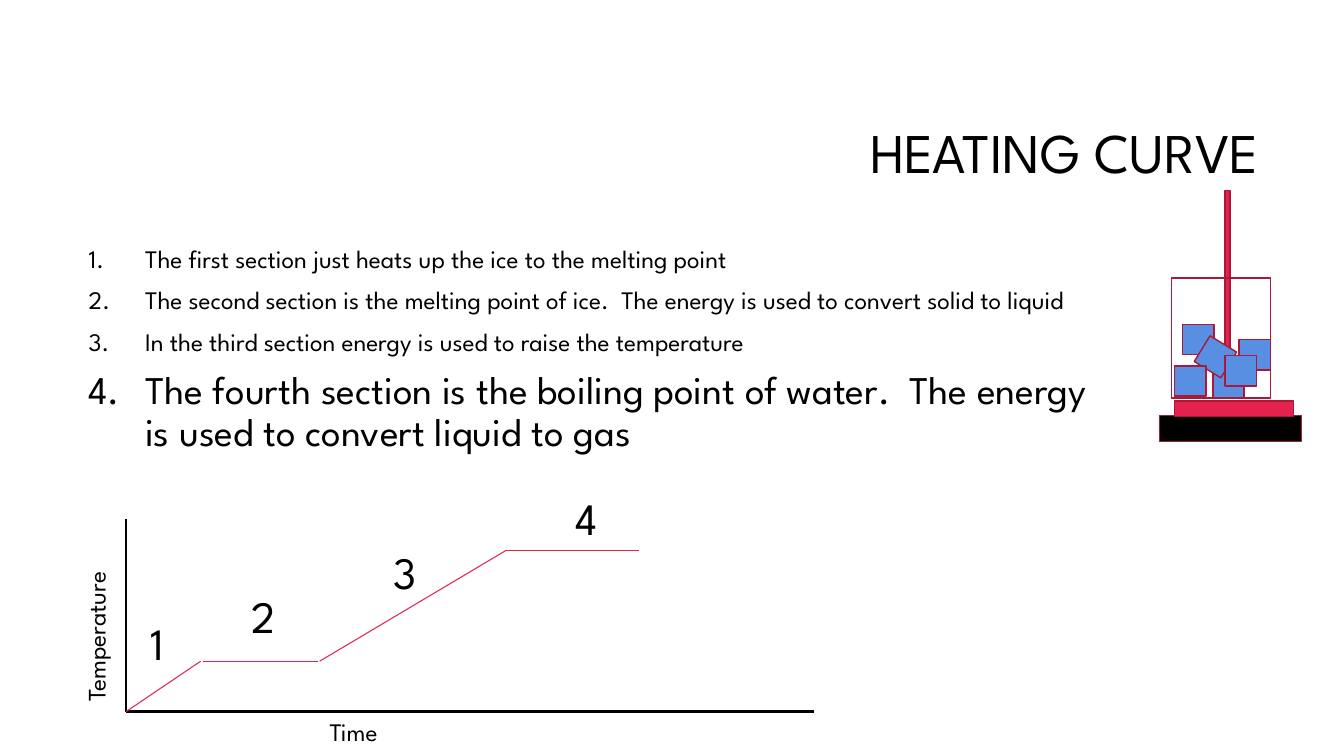
from lxml import etree
from pptx import Presentation
from pptx.dml.color import RGBColor
from pptx.enum.shapes import MSO_CONNECTOR as Connector, MSO_SHAPE as Shape
from pptx.enum.text import MSO_ANCHOR as Anchor, MSO_AUTO_SIZE as AutoSize, PP_ALIGN as Align
from pptx.oxml.ns import qn
from pptx.util import Inches, Pt

FONT = "League Spartan"
COLORS = {
    "black": "000000",
    "red": "E5224E",
    "outline": "A9193A",
    "ice": "588FE2",
}
SECTIONS = [
    ("The first section just heats up the ice to the melting point", 18),
    ("The second section is the melting point of ice.  The energy is used to convert solid to liquid", 18),
    ("In the third section energy is used to raise the temperature", 18),
    ("The fourth section is the boiling point of water.  The energy is used to convert liquid to gas", 28),
]
ICE_CUBES = [
    (11.73, 3.22, 0),
    (12.03, 3.65, 0),
    (11.9, 3.39, 31.6),
    (11.65, 3.63, 0),
    (12.29, 3.37, 0),
    (12.15, 3.53, 0),
]
AXES = [((1.25, 5.15), (1.25, 7.06)), ((1.25, 7.06), (8.07, 7.06))]
CURVE = [
    ("1", (1.25, 7.06), (1.99, 6.56), (1.39, 6.06)),
    ("2", (2.01, 6.56), (3.15, 6.56), (2.4, 5.79)),
    ("3", (3.17, 6.56), (5.02, 5.46), (3.8, 5.36)),
    ("4", (5.02, 5.46), (6.34, 5.46), (5.61, 4.82)),
]


def color(name):
    return RGBColor.from_string(COLORS[name])


def place(shape, left, top, width, height):
    shape.left, shape.top = Inches(left), Inches(top)
    shape.width, shape.height = Inches(width), Inches(height)


def write(paragraph, text, size=18, align=Align.LEFT, line_spacing=None, space_before=0):
    paragraph.text = text
    paragraph.alignment = align
    paragraph.space_before = Pt(space_before)
    if line_spacing:
        paragraph.line_spacing = line_spacing
    font = paragraph.runs[0].font
    font.name = FONT
    font.size = Pt(size)
    font.color.rgb = color("black")


def number(paragraph):
    properties = paragraph._p.get_or_add_pPr()
    properties.set("marL", str(Inches(0.56)))
    properties.set("indent", str(Inches(-0.56)))
    etree.SubElement(properties, qn("a:buFont"), typeface="+mj-lt")
    etree.SubElement(properties, qn("a:buAutoNum"), type="arabicPeriod")


def add_title(slide, text):
    title = slide.shapes.title
    place(title, 3.17, 0.84, 9.42, 1.41)
    title.text_frame.auto_size = AutoSize.NONE
    title.text_frame.vertical_anchor = Anchor.MIDDLE
    write(title.text_frame.paragraphs[0], text, size=40, align=Align.RIGHT, line_spacing=0.9)


def add_sections(slide):
    body = slide.placeholders[1]
    place(body, 0.78, 2.4, 10.36, 4.4)
    frame = body.text_frame
    frame.auto_size = AutoSize.NONE
    frame.vertical_anchor = Anchor.TOP
    for index, (text, size) in enumerate(SECTIONS):
        paragraph = frame.add_paragraph() if index else frame.paragraphs[0]
        number(paragraph)
        write(paragraph, text, size=size, line_spacing=0.9, space_before=10 if index else 0)


def add_block(slide, left, top, width, height, fill=None, rotation=0):
    block = slide.shapes.add_shape(
        Shape.RECTANGLE, Inches(left), Inches(top), Inches(width), Inches(height)
    )
    block.shadow.inherit = False
    block.rotation = rotation
    if fill:
        block.fill.solid()
        block.fill.fore_color.rgb = color(fill)
    else:
        block.fill.background()
    block.line.color.rgb = color("outline")
    block.line.width = Pt(1)


def add_line(slide, start, end, stroke, width):
    line = slide.shapes.add_connector(
        Connector.STRAIGHT, *(Inches(value) for value in (*start, *end))
    )
    line.line.color.rgb = color(stroke)
    line.line.width = Pt(width)
    etree.SubElement(line._element.spPr, qn("a:effectLst"))


def add_label(slide, text, left, top, width, height, size=18, rotation=0):
    label = slide.shapes.add_textbox(
        Inches(left), Inches(top), Inches(width), Inches(height)
    )
    label.rotation = rotation
    label.text_frame.word_wrap = True
    label.text_frame.auto_size = AutoSize.SHAPE_TO_FIT_TEXT
    write(label.text_frame.paragraphs[0], text, size=size)


def add_beaker(slide):
    add_block(slide, 12.15, 1.89, 0.05, 1.86, fill="red")
    add_block(slide, 11.62, 2.76, 0.98, 1.19)
    for left, top, rotation in ICE_CUBES:
        add_block(slide, left, top, 0.31, 0.3, fill="ice", rotation=rotation)
    add_block(slide, 11.5, 4.12, 1.41, 0.26, fill="black")
    add_block(slide, 11.65, 3.98, 1.18, 0.15, fill="red")


def add_heating_graph(slide):
    for start, end in AXES:
        add_line(slide, start, end, "black", 2)
    add_label(slide, "Time", 3.17, 7.06, 2.24, 0.4)
    add_label(slide, "Temperature", -0.17, 5.74, 2.24, 0.4, rotation=270)
    for text, start, end, (left, top) in CURVE:
        add_line(slide, start, end, "red", 0.75)
        add_label(slide, text, left, top, 0.64, 0.64, size=32)


def main():
    presentation = Presentation()
    presentation.slide_width = Inches(13.33)
    presentation.slide_height = Inches(7.5)
    slide = presentation.slides.add_slide(presentation.slide_layouts[1])
    add_title(slide, "HEATING CURVE")
    add_sections(slide)
    add_beaker(slide)
    add_heating_graph(slide)
    presentation.save("out.pptx")


if __name__ == "__main__":
    main()
